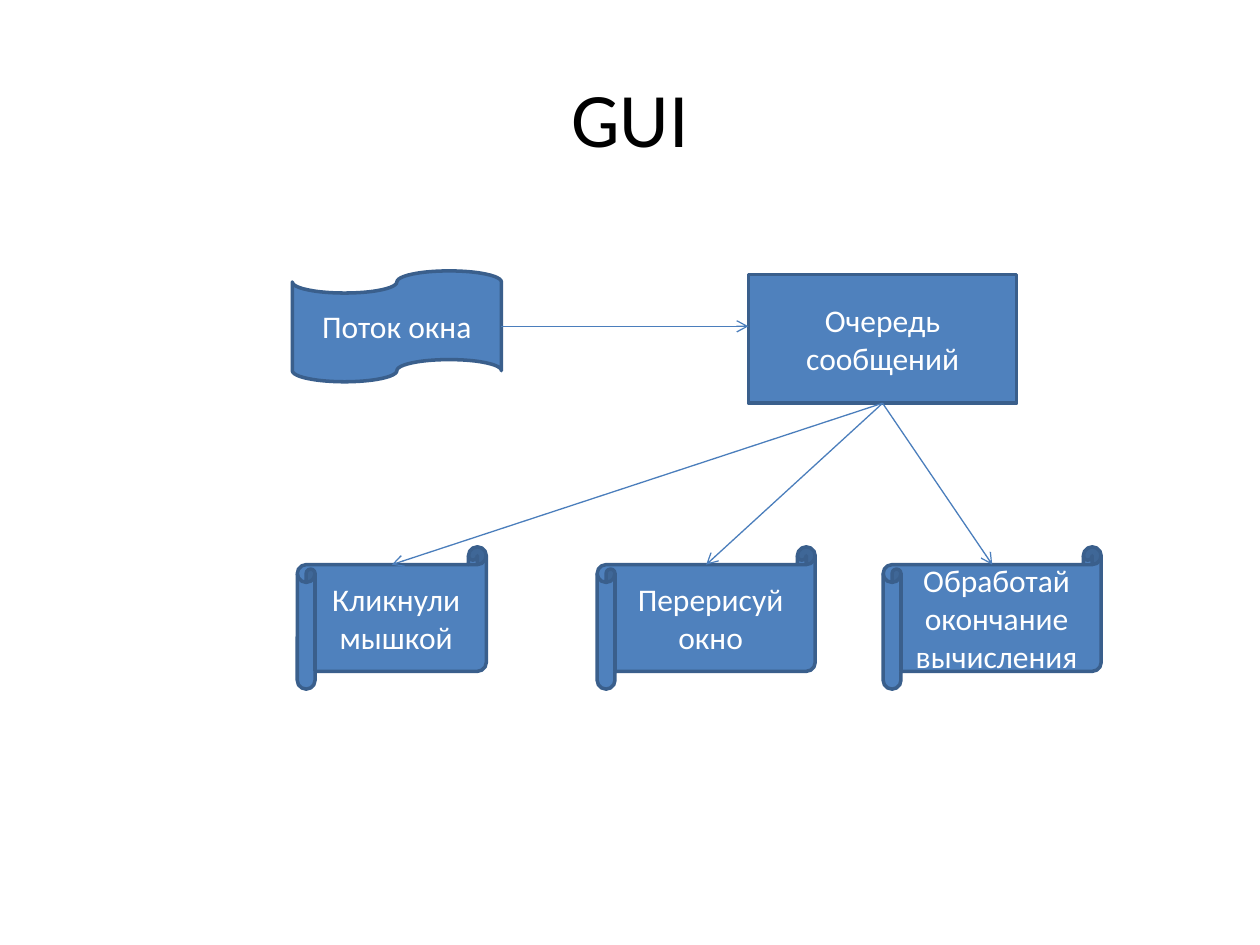
from dataclasses import dataclass

from lxml import etree
from pptx import Presentation
from pptx.dml.color import RGBColor
from pptx.enum.shapes import MSO_CONNECTOR, MSO_SHAPE
from pptx.enum.text import MSO_ANCHOR, PP_ALIGN
from pptx.oxml.ns import qn
from pptx.shapes.autoshape import Shape
from pptx.shapes.connector import Connector
from pptx.shapes.shapetree import SlideShapes
from pptx.util import Inches, Pt

STRAIGHT = MSO_CONNECTOR.STRAIGHT
RECTANGLE = MSO_SHAPE.RECTANGLE
TAPE = MSO_SHAPE.FLOWCHART_PUNCHED_TAPE
SCROLL = MSO_SHAPE.HORIZONTAL_SCROLL
CENTER = PP_ALIGN.CENTER
MIDDLE = MSO_ANCHOR.MIDDLE

BLACK = RGBColor(0x00, 0x00, 0x00)
WHITE = RGBColor(0xFF, 0xFF, 0xFF)
BLUE = RGBColor(0x4F, 0x81, 0xBD)
BORDER_BLUE = RGBColor(0x3A, 0x5F, 0x8C)
ARROW_BLUE = RGBColor(0x4B, 0x7E, 0xBC)

FONT = "Calibri"
CELL = Inches(0.1)
COLUMNS, ROWS = 100, 75
BOTTOM_SIDE = 2
SCROLL_ROW, SCROLL_HEIGHT = 43.4, 11.3
SCROLL_CURL = 0.125


@dataclass(frozen=True)
class Node:
    text: str
    preset: MSO_SHAPE
    column: float
    row: float
    columns: float
    rows: float

    @property
    def center_column(self) -> float:
        return self.column + self.columns / 2

    @property
    def center_row(self) -> float:
        return self.row + self.rows / 2


def message(text: str, column: float, columns: float) -> Node:
    return Node(text, SCROLL, column, SCROLL_ROW, columns, SCROLL_HEIGHT)


QUEUE = Node("Очередь сообщений", RECTANGLE, 59.4, 21.8, 21.3, 10.2)
WINDOW_THREAD = Node("Поток окна", TAPE, 23.2, 21.5, 16.6, 8.8)
MESSAGES = (
    message("Перерисуй окно", 47.4, 17.3),
    message("Кликнули мышкой", 23.6, 15),
    message("Обработай окончание вычисления", 70.1, 17.3),
)


def grid(*cells: float) -> list[int]:
    return [round(cell * CELL) for cell in cells]


def write_text(shape: Shape, text: str, *, size: float, color: RGBColor) -> None:
    frame = shape.text_frame
    frame.word_wrap = True
    frame.vertical_anchor = MIDDLE
    paragraph = frame.paragraphs[0]
    paragraph.alignment = CENTER
    run = paragraph.add_run()
    run.text = text
    run.font.name = FONT
    run.font.size = Pt(size)
    run.font.color.rgb = color


def draw_node(shapes: SlideShapes, node: Node) -> Shape:
    shape = shapes.add_shape(
        node.preset, *grid(node.column, node.row, node.columns, node.rows)
    )
    shape.shadow.inherit = False
    shape.fill.solid()
    shape.fill.fore_color.rgb = BLUE
    shape.line.color.rgb = BORDER_BLUE
    shape.line.width = Pt(2)
    write_text(shape, node.text, size=18, color=WHITE)
    return shape


def draw_arrow(
    shapes: SlideShapes, start: tuple[float, float], end: tuple[float, float]
) -> Connector:
    arrow = shapes.add_connector(STRAIGHT, *grid(*start, *end))
    arrow.line.color.rgb = ARROW_BLUE
    arrow.line.width = Pt(0.75)
    etree.SubElement(arrow.line._get_or_add_ln(), qn("a:tailEnd"), type="arrow")
    etree.SubElement(arrow._element.spPr, qn("a:effectLst"))
    return arrow


def main() -> None:
    presentation = Presentation()
    presentation.slide_width, presentation.slide_height = grid(COLUMNS, ROWS)
    slide = presentation.slides.add_slide(presentation.slide_layouts[6])
    shapes = slide.shapes

    title = shapes.add_textbox(*grid(5, 3, 90, 12.5))
    write_text(title, "GUI", size=44, color=BLACK)

    queue = draw_node(shapes, QUEUE)
    draw_node(shapes, WINDOW_THREAD)
    thread_row = WINDOW_THREAD.center_row
    thread_right = WINDOW_THREAD.column + WINDOW_THREAD.columns
    draw_arrow(shapes, (thread_right, thread_row), (QUEUE.column, thread_row))

    queue_bottom = (QUEUE.center_column, QUEUE.row + QUEUE.rows)
    for scroll in MESSAGES:
        draw_node(shapes, scroll)
        scroll_top = scroll.row + SCROLL_CURL * scroll.rows
        arrow = draw_arrow(shapes, queue_bottom, (scroll.center_column, scroll_top))
        arrow.begin_connect(queue, BOTTOM_SIDE)

    presentation.save("out.pptx")


if __name__ == "__main__":
    main()
